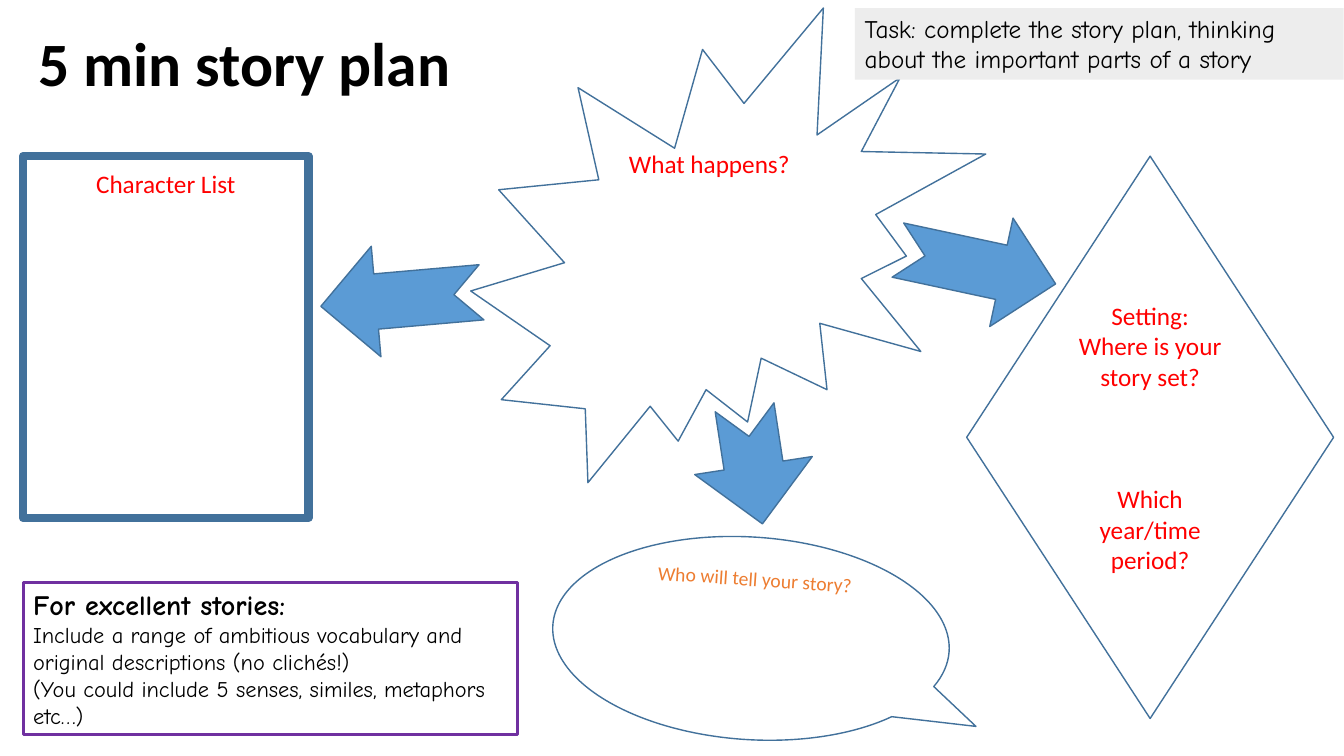
from dataclasses import dataclass

from pptx import Presentation
from pptx.dml.color import RGBColor
from pptx.enum.shapes import MSO_SHAPE
from pptx.enum.text import MSO_ANCHOR, PP_ALIGN
from pptx.util import Emu, Inches, Pt

BURST = MSO_SHAPE.EXPLOSION2
ARROW = MSO_SHAPE.NOTCHED_RIGHT_ARROW
RECT = MSO_SHAPE.RECTANGLE
DIAMOND = MSO_SHAPE.FLOWCHART_DECISION
SPEECH = MSO_SHAPE.OVAL_CALLOUT
TOP, MIDDLE = MSO_ANCHOR.TOP, MSO_ANCHOR.MIDDLE
LEFT, CENTER = PP_ALIGN.LEFT, PP_ALIGN.CENTER
COLS = 160


@dataclass(frozen=True)
class Theme:
    """Colours, fonts and type sizes of the slide."""
    ink: str = "000000"
    red: str = "FF0000"
    orange: str = "ED7D31"
    blue: str = "5B9BD5"
    edge: str = "42719B"
    purple: str = "7030A0"
    grey: str = "EDEDED"
    sans: str = "Calibri"
    comic: str = "Comic Neue"
    title: int = 44
    head: int = 20
    body: int = 18
    small: int = 16
    tiny: int = 14


THEME = Theme()


def apply(target, values):
    """Set each named attribute of the target."""
    for name, value in values.items():
        setattr(target, name, value)


def place(deck, box):
    """Turn a box in grid columns and rows into slide lengths."""
    unit = deck.slide_width / COLS
    return [Emu(round(part * unit)) for part in box]


def style(font, size, color, face, bold=False):
    """Format one font."""
    apply(font, {"size": Pt(size), "name": face, "bold": bold})
    font.color.rgb = RGBColor.from_string(color)


def write(frame, lines, face, align):
    """Write lines of text, size, colour, weight and space before."""
    for index, (text, size, color, bold, gap) in enumerate(lines):
        para = frame.paragraphs[0] if index == 0 else frame.add_paragraph()
        apply(para, {"alignment": align, "space_before": Pt(gap)})
        run = para.add_run()
        run.text = text
        style(run.font, size, color, face, bold)


def draw(deck, slide, kind, box, fill=None, line=None, width=1, turn=0):
    """Draw a preset shape in its box."""
    shape = slide.shapes.add_shape(kind, *place(deck, box))
    shape.shadow.inherit = False
    shape.rotation = turn
    for part, color in ((shape.fill, fill), (shape.line.fill, line)):
        if color:
            part.solid()
            part.fore_color.rgb = RGBColor.from_string(color)
        else:
            part.background()
    if line:
        shape.line.width = Pt(width)
    return shape


def title(deck, slide, box, text):
    """Place the slide title."""
    head = slide.shapes.title
    spot = place(deck, box)
    apply(head, dict(zip(("left", "top", "width", "height"), spot)))
    apply(head.text_frame, {"vertical_anchor": MIDDLE, "word_wrap": True})
    write(head.text_frame, [(text, THEME.title, THEME.ink, True, 0)], THEME.sans, LEFT)
    head.text_frame.paragraphs[0].line_spacing = 0.9


def prompt(deck, slide, kind, box, lines, anchor=TOP, inset=0, **look):
    """Draw an outlined planning shape with its prompt."""
    shape = draw(deck, slide, kind, box, line=THEME.edge, **look)
    frame = shape.text_frame
    pad = place(deck, [inset])[0]
    apply(frame, {"vertical_anchor": anchor, "word_wrap": True, "margin_top": pad})
    write(frame, lines, THEME.sans, CENTER)
    return shape


def note(deck, slide, box, lines, **look):
    """Draw a box of guidance for the class."""
    frame = draw(deck, slide, RECT, box, **look).text_frame
    apply(frame, {"vertical_anchor": TOP, "word_wrap": True})
    write(frame, lines, THEME.comic, LEFT)


def ask(text, gap=0):
    """Give one red prompt line."""
    return text, THEME.body, THEME.red, False, gap


def plan(deck, slide):
    """Lay out the story plan."""
    title(deck, slide, (3.36, 1.92, 52.68, 12), "5 min story plan")
    prompt(deck, slide, BURST, (56.04, 0.96, 61.32, 56.52), [ask("What happens?")])
    prompt(deck, slide, RECT, (2.76, 18.6, 33.96, 43.08),
           [ask("Character List")], inset=1.4, width=6)
    prompt(deck, slide, DIAMOND, (115.08, 18.6, 43.68, 66.96),
           [ask("Setting:"), ask("Where is your story set?"),
            ask("Which year/time period?", 66)], anchor=MIDDLE, inset=0.6)
    speech = prompt(deck, slide, SPEECH, (65.76, 63.96, 47.28, 24.12),
                    [("Who will tell your story?", THEME.tiny, THEME.orange, False, 0)],
                    turn=3.8)
    for index, value in enumerate((0.58, 0.36)):
        speech.adjustments[index] = value
    for box, turn in (((106.68, 25.2, 19.2, 13.2), 12.1),
                      ((38.16, 29.04, 19.2, 13.2), 175),
                      ((82.68, 48.36, 14.04, 14.16), 81.3)):
        draw(deck, slide, ARROW, box, THEME.blue, THEME.edge, turn=turn)
    note(deck, slide, (101.76, 0.96, 58.2, 8.52),
         [("Task: complete the story plan, thinking about the important parts of a story",
           THEME.body, THEME.ink, False, 0)], fill=THEME.grey)
    tips = ("Include a range of ambitious vocabulary and original descriptions (no clichés!)",
            "(You could include 5 senses, similes, metaphors etc…)")
    note(deck, slide, (2.76, 69.36, 58.8, 18.12),
         [("For excellent stories:", THEME.head, THEME.ink, True, 0)]
         + [(tip, THEME.small, THEME.ink, False, 0) for tip in tips],
         line=THEME.purple, width=2.25)


def main():
    """Build and save the slide."""
    deck = Presentation()
    apply(deck, {"slide_width": Inches(13.33), "slide_height": Inches(7.5)})
    plan(deck, deck.slides.add_slide(deck.slide_layouts[5]))
    deck.save("out.pptx")


if __name__ == "__main__":
    main()
